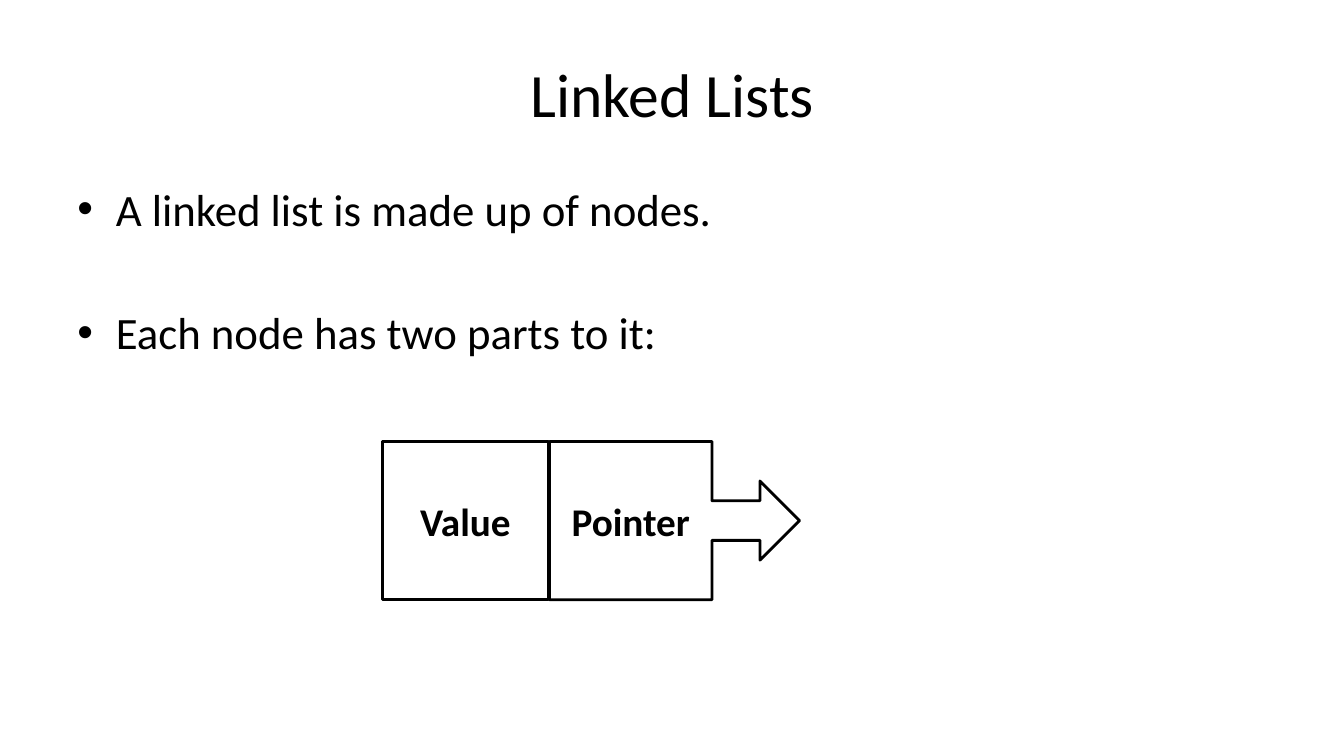
"""Build a slide that introduces the two parts of a linked list node."""
import pptx
import pptx.util
import pptx.dml.color
import pptx.enum.shapes
import pptx.enum.text
import pptx.oxml
import pptx.oxml.ns

Inches, Pt = pptx.util.Inches, pptx.util.Pt
SHAPE = pptx.enum.shapes.MSO_SHAPE
ALIGN = pptx.enum.text.PP_ALIGN
ANCHOR = pptx.enum.text.MSO_ANCHOR

TITLE = "Linked Lists"
BULLETS = ["A linked list is made up of nodes.", "Each node has two parts to it:"]
NODE_PARTS = [
    ("Pointer", SHAPE.RIGHT_ARROW_CALLOUT, 5.45, 2.48),
    ("Value", SHAPE.RECTANGLE, 3.79, 1.65),
]
COLORS = {"ink": "000000"}
FORMATS = {
    "title": {"size": Pt(44), "name": "Calibri", "bold": False},
    "body": {"size": Pt(32), "name": "Calibri", "bold": False},
    "node": {"size": Pt(28), "name": "Calibri", "bold": True},
}
MARGIN, CONTENT_W = 0.67, 12
NODE_TOP, NODE_H = 4.38, 1.57
INDENT = Inches(0.38)
BULLET_GAP = Pt(50)


def rgb(name):
    """Return the named colour."""
    return pptx.dml.color.RGBColor.from_string(COLORS[name])


def write(p, text, style, align):
    """Put one formatted run into a paragraph."""
    p.alignment = align
    r = p.add_run()
    r.text = text
    for key, value in FORMATS[style].items():
        setattr(r.font, key, value)
    r.font.color.rgb = rgb("ink")


def add_bullet(p):
    """Give a paragraph a round bullet and a hanging indent."""
    pPr = p._p.get_or_add_pPr()
    pPr.set("marL", str(INDENT))
    pPr.set("indent", str(-INDENT))
    for tag, attr, value in (("buFont", "typeface", "Arial"), ("buChar", "char", "•")):
        el = pptx.oxml.parse_xml(f"<a:{tag} {pptx.oxml.ns.nsdecls('a')}/>")
        el.set(attr, value)
        pPr.append(el)


def add_title(s):
    """Place and fill the title."""
    sp = s.shapes.title
    sp.left, sp.top = Inches(MARGIN), Inches(0.3)
    sp.width, sp.height = Inches(CONTENT_W), Inches(1.25)
    tf = sp.text_frame
    tf.vertical_anchor = ANCHOR.MIDDLE
    write(tf.paragraphs[0], TITLE, "title", ALIGN.CENTER)


def add_body(s):
    """Add the bulleted text."""
    sp = s.shapes.add_textbox(Inches(MARGIN), Inches(1.75), Inches(CONTENT_W), Inches(4.95))
    tf = sp.text_frame
    tf.word_wrap = True
    for i, text in enumerate(BULLETS):
        p = tf.add_paragraph() if i else tf.paragraphs[0]
        write(p, text, "body", ALIGN.LEFT)
        p.space_before = BULLET_GAP if i else Pt(0)
        add_bullet(p)


def add_node(s):
    """Draw the parts of the node."""
    for text, kind, left, width in NODE_PARTS:
        sp = s.shapes.add_shape(kind, Inches(left), Inches(NODE_TOP), Inches(width), Inches(NODE_H))
        sp.shadow.inherit = False
        sp.fill.background()
        sp.line.color.rgb = rgb("ink")
        sp.line.width = Pt(2)
        tf = sp.text_frame
        tf.word_wrap = True
        tf.vertical_anchor = ANCHOR.MIDDLE
        write(tf.paragraphs[0], text, "node", ALIGN.CENTER)


def main():
    """Build and save the slide."""
    prs = pptx.Presentation()
    prs.slide_width, prs.slide_height = Inches(13.33), Inches(7.5)
    s = prs.slides.add_slide(prs.slide_layouts[5])
    add_title(s)
    add_body(s)
    add_node(s)
    prs.save("out.pptx")


if __name__ == "__main__":
    main()
